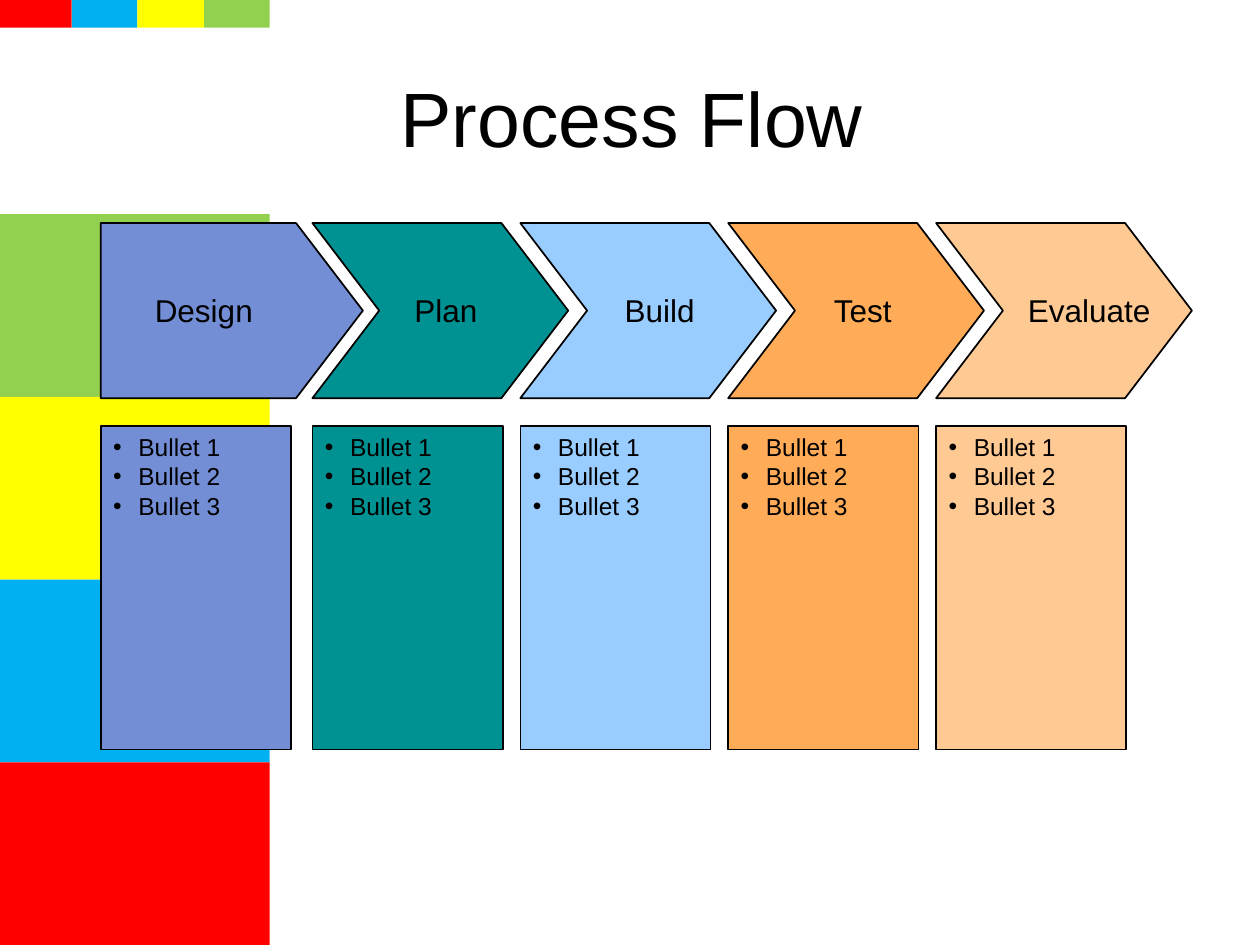
from pptx import Presentation
from pptx.dml.color import RGBColor
from pptx.enum.shapes import MSO_SHAPE as Kind
from pptx.enum.text import MSO_ANCHOR as Anchor, MSO_AUTO_SIZE as Fit, PP_ALIGN as Align
from pptx.oxml import parse_xml
from pptx.oxml.ns import nsdecls
from pptx.util import Inches, Pt

RED, BLUE, YELLOW, GREEN = "FF0000", "00B0F0", "FFFF00", "92D050"
STEPS = [
    ("Design", "748ED6", 8, 11.3, 9.8),
    ("Plan", "009193", 24.8, 31.9, 7),
    ("Build", "99CCFF", 41.3, 48.6, 7.6),
    ("Test", "FFAB57", 57.8, 65.2, 6.9),
    ("Evaluate", "FFC993", 74.3, 80.6, 11.7),
]
ITEMS = ["Bullet 1", "Bullet 2", "Bullet 3"]


def tint(code):
    """Turn a hex string into a colour."""
    return RGBColor.from_string(code)


def write(frame, *lines, size=18, font="Arial", color="000000", align=Align.LEFT,
          anchor=Anchor.TOP, wrap=True, bullet=False):
    """Fill a text frame with one paragraph per line."""
    frame.word_wrap = wrap
    frame.vertical_anchor = anchor
    for i, line in enumerate(lines):
        para = frame.add_paragraph() if i else frame.paragraphs[0]
        para.alignment = align
        run = para.add_run()
        run.text = line
        run.font.size = Pt(size)
        run.font.name = font
        run.font.color.rgb = tint(color)
        if bullet:
            props = para._p.get_or_add_pPr()
            props.set("marL", str(Inches(0.2)))
            props.set("indent", str(-Inches(0.2)))
            props.append(parse_xml(f'<a:buFont {nsdecls("a")} typeface="{font}"/>'))
            props.append(parse_xml(f'<a:buChar {nsdecls("a")} char="•"/>'))


class Board:
    """Hold the slide, its style and a grid of 100 columns by 75 rows."""

    def __init__(self, deck, ink="000000", edge=1):
        """Add a titled slide to the deck."""
        self.slide = deck.slides.add_slide(deck.slide_layouts[5])
        self.shapes = self.slide.shapes
        self.col, self.row = deck.slide_width / 100, deck.slide_height / 75
        self.ink, self.edge = ink, edge

    def span(self, x, y, w, h):
        """Turn grid cells into slide lengths."""
        return [round(n) for n in (x * self.col, y * self.row, w * self.col, h * self.row)]

    def paint(self, shape, fill, line=True):
        """Give a shape its fill and outline."""
        shape.shadow.inherit = False
        shape.fill.solid()
        shape.fill.fore_color.rgb = tint(fill)
        if line:
            shape.line.color.rgb = tint(self.ink)
            shape.line.width = Pt(self.edge)
        else:
            shape.line.fill.background()
        return shape

    def title(self, text, *cells):
        """Move and fill the title placeholder."""
        head = self.shapes.title
        head.left, head.top, head.width, head.height = self.span(*cells)
        write(head.text_frame, text, size=44, align=Align.CENTER, anchor=Anchor.MIDDLE)

    def rect(self, fill, *cells, line=True):
        """Draw a filled rectangle."""
        shape = self.shapes.add_shape(Kind.RECTANGLE, *self.span(*cells))
        return self.paint(shape, fill, line)

    def panel(self, fill, items, *cells):
        """Draw a box with a bullet list."""
        write(self.rect(fill, *cells).text_frame, *items, size=14, bullet=True)

    def arrow(self, fill, x, y, w, h, tip=5.3, notch=True):
        """Draw a process arrow, notched or flat at its tail."""
        mid, low, neck = y + h / 2, y + h, x + w - tip
        dots = [(x, y), (neck, y), (x + w, mid), (neck, low), (x, low)]
        if notch:
            dots.append((x + tip, mid))
        spots = [(round(a * self.col), round(b * self.row)) for a, b in dots]
        form = self.shapes.build_freeform(*spots[0], scale=1.0)
        form.add_line_segments(spots[1:], close=True)
        self.paint(form.convert_to_shape(), fill)

    def label(self, text, *cells):
        """Place a line of text that sizes its box."""
        frame = self.shapes.add_textbox(*self.span(*cells)).text_frame
        write(frame, text, wrap=False)
        frame.auto_size = Fit.SHAPE_TO_FIT_TEXT


def main():
    """Build the process slide."""
    deck = Presentation()
    deck.slide_width, deck.slide_height = Inches(10), Inches(7.5)
    board = Board(deck)
    for i, fill in enumerate([GREEN, YELLOW, BLUE, RED]):
        board.rect(fill, 0, 17 + 14.5 * i, 21.4, 14.5, line=False)
    edges = [0, 5.7, 10.9, 16.2, 21.4]
    for fill, x, end in zip([RED, BLUE, YELLOW, GREEN], edges, edges[1:]):
        board.rect(fill, x, 0, end - x, 2.2, line=False)
    board.title("Process Flow", 5.3, 3, 89.7, 12.5)
    for i, (name, fill, x, left, wide) in enumerate(STEPS):
        board.panel(fill, ITEMS, x, 33.8, 15.1, 25.7)
        board.arrow(fill, x, 17.7, 20.3 if i else 20.8, 13.9, notch=i > 0)
        board.label(name, left, 22.6, wide, 4)
    deck.save("out.pptx")


if __name__ == "__main__":
    main()
